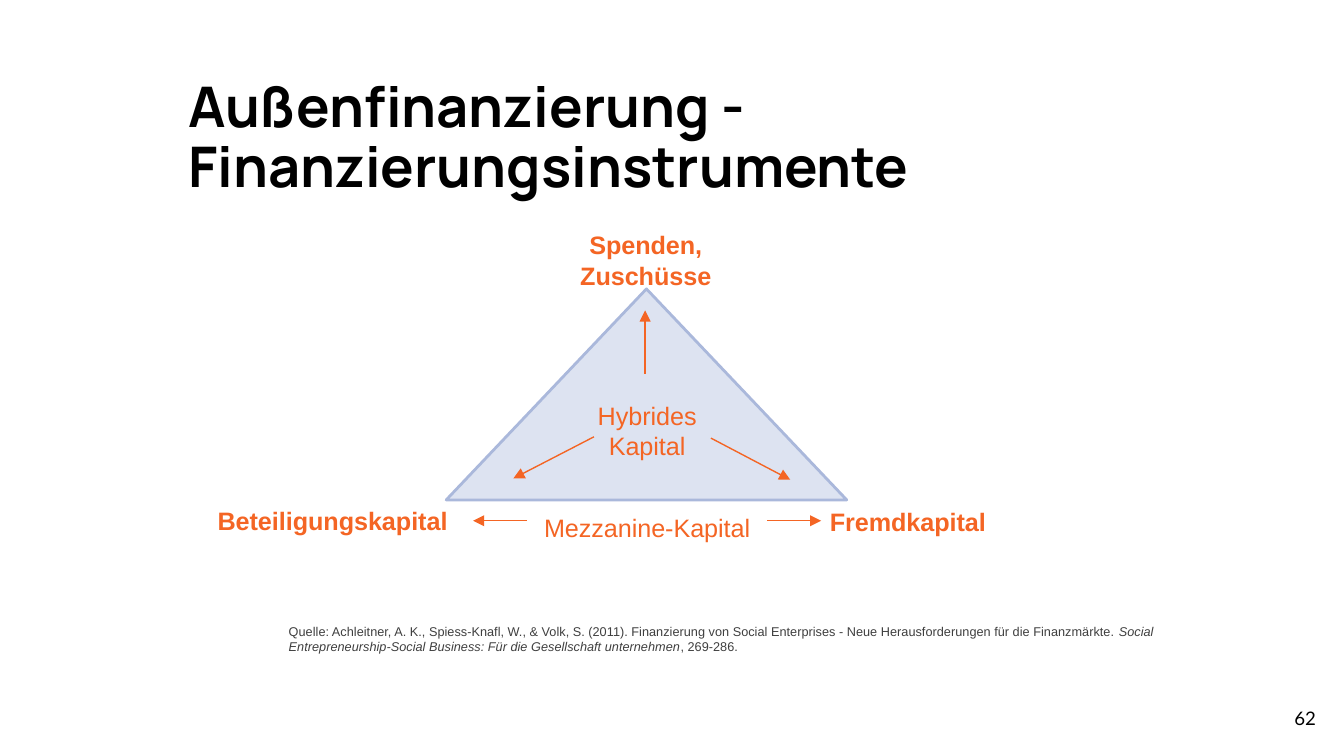
from dataclasses import dataclass

from lxml import etree
from pptx import Presentation
from pptx.dml.color import RGBColor
from pptx.enum.shapes import MSO_CONNECTOR, MSO_SHAPE
from pptx.enum.text import MSO_ANCHOR, PP_ALIGN
from pptx.oxml.ns import qn
from pptx.util import Emu, Inches, Pt

STRAIGHT = MSO_CONNECTOR.STRAIGHT
TRIANGLE = MSO_SHAPE.ISOSCELES_TRIANGLE
TOP, MIDDLE = MSO_ANCHOR.TOP, MSO_ANCHOR.MIDDLE
LEFT, CENTER, RIGHT = PP_ALIGN.LEFT, PP_ALIGN.CENTER, PP_ALIGN.RIGHT

CELL = Inches(0.1)
COLUMNS, ROWS = 100, 56.25
ORANGE, BLACK, GREY = "F46524", "000000", "3F3F3F"
PALE_BLUE, EDGE_BLUE = "DDE3F1", "AAB8DB"


@dataclass(frozen=True)
class Label:
    runs: tuple[str, ...]
    column: float
    row: float
    columns: float
    rows: float = 3.3
    size: float = 13.5
    color: str = ORANGE
    font: str = "Arial"
    bold: bool = False
    align: PP_ALIGN = CENTER
    anchor: MSO_ANCHOR = TOP
    inset: tuple[float, float] = (1, 0.5)
    spacing: float = 1.0
    italic_run: int = -1


@dataclass(frozen=True)
class Arrow:
    start: tuple[float, float]
    tip: tuple[float, float]


LABELS = (
    Label(("Außenfinanzierung - Finanzierungsinstrumente",), 14, 6, 84.9, 2.1,
          size=30, color=BLACK, font="Manrope", bold=True, align=LEFT,
          inset=(0, 0), spacing=0.88),
    Label(("Spenden, Zuschüsse",), 38.6, 16.6, 18.9, bold=True),
    Label(("Beteiligungskapital",), 14.8, 37.1, 19.9, bold=True),
    Label(("Fremdkapital",), 58.1, 37.2, 18.9, bold=True),
    Label(("Mezzanine-Kapital",), 38.2, 37.6, 19.9),
    Label(("Hybrides Kapital",), 41.2, 29.3, 13.9),
    Label((
        "Quelle: Achleitner, A. K., Spiess-Knafl, W., & Volk, S. (2011). "
        "Finanzierung von Social Enterprises - Neue Herausforderungen "
        "für die Finanzmärkte. ",
        "Social Entrepreneurship-Social Business: "
        "Für die Gesellschaft unternehmen",
        ", 269-286.",
    ), 20.5, 45.9, 68.5, size=6.8, color=GREY, align=LEFT, italic_run=1),
    Label(("62",), 92.9, 51.3, 6, 4.3, size=10, color=BLACK, font="Lato",
          align=RIGHT, anchor=MIDDLE, inset=(1, 1)),
)

ARROWS = (
    Arrow((39.2, 38.75), (35.2, 38.75)),
    Arrow((57.1, 38.75), (61.1, 38.75)),
    Arrow((44.2, 32.5), (38.2, 35.6)),
    Arrow((52.9, 32.6), (58.8, 35.7)),
    Arrow((48, 27.8), (48, 23.1)),
)


def grid(*cells: float) -> list[Emu]:
    return [Emu(round(cell * CELL)) for cell in cells]


def rgb(color: str) -> RGBColor:
    return RGBColor.from_string(color)


def draw_label(slide, label: Label) -> None:
    frame = slide.shapes.add_textbox(
        *grid(label.column, label.row, label.columns, label.rows)).text_frame
    frame.word_wrap = True
    frame.vertical_anchor = label.anchor
    side, edge = grid(*label.inset)
    frame.margin_left = frame.margin_right = side
    frame.margin_top = frame.margin_bottom = edge
    paragraph = frame.paragraphs[0]
    paragraph.alignment = label.align
    paragraph.line_spacing = label.spacing
    paragraph.font.name = label.font
    paragraph.font.size = Pt(label.size)
    paragraph.font.bold = label.bold
    paragraph.font.color.rgb = rgb(label.color)
    for index, text in enumerate(label.runs):
        run = paragraph.add_run()
        run.text = text
        if index == label.italic_run:
            run.font.italic = True


def draw_arrow(slide, arrow: Arrow) -> None:
    connector = slide.shapes.add_connector(
        STRAIGHT, *grid(*arrow.start, *arrow.tip))
    connector.line.color.rgb = rgb(ORANGE)
    connector.line.width = Pt(0.75)
    etree.SubElement(connector.line._get_or_add_ln(), qn("a:tailEnd"),
                     type="triangle")
    etree.SubElement(connector._element.spPr, qn("a:effectLst"))


def draw_triangle(slide) -> None:
    triangle = slide.shapes.add_shape(TRIANGLE, *grid(33.2, 21.5, 29.8, 15.7))
    triangle.shadow.inherit = False
    triangle.fill.solid()
    triangle.fill.fore_color.rgb = rgb(PALE_BLUE)
    triangle.line.color.rgb = rgb(EDGE_BLUE)
    triangle.line.width = Pt(1.5)


def main() -> None:
    deck = Presentation()
    deck.slide_width, deck.slide_height = grid(COLUMNS, ROWS)
    slide = deck.slides.add_slide(deck.slide_layouts[6])
    draw_triangle(slide)
    for label in LABELS:
        draw_label(slide, label)
    for arrow in ARROWS:
        draw_arrow(slide, arrow)
    deck.save("out.pptx")


if __name__ == "__main__":
    main()
